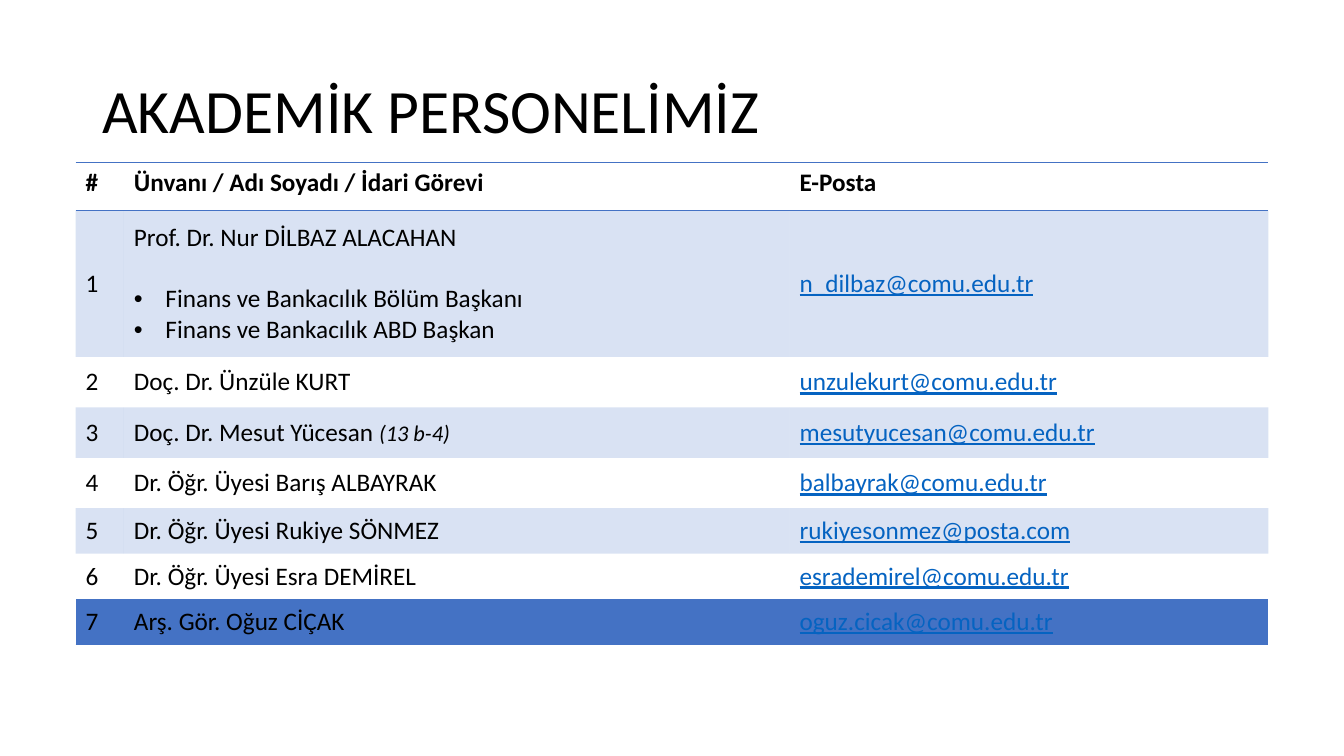
import dataclasses

import pptx
import pptx.dml.color
import pptx.enum.text
import pptx.oxml
import pptx.oxml.ns
import pptx.util

Pt = pptx.util.Pt
MIDDLE = pptx.enum.text.MSO_ANCHOR.MIDDLE


@dataclasses.dataclass(frozen=True)
class Theme:
    """Colours, font and type sizes of the slide."""
    font: str = "Calibri"
    text: str = "000000"
    accent: str = "4472C4"
    link: str = "0563C1"
    title_size: int = 44
    body_size: int = 18
    note_size: int = 16
    band_alpha: int = 20


THEME = Theme()
PLAIN_STYLE = "{2D5ABB26-0587-4C30-8999-92F81FD0307C}"
COLUMN_WIDTHS = (34.5, 475.5, 342)
ROW_HEIGHTS = (34.5, 104.5, 36, 36, 36, 32.5, 32.5, 32.5)
HEADINGS = ("#", "Ünvanı / Adı Soyadı / İdari Görevi", "E-Posta")
STAFF = (
    ("Prof. Dr. Nur DİLBAZ ALACAHAN", "", "n_dilbaz@comu.edu.tr",
     ("Finans ve Bankacılık Bölüm Başkanı", "Finans ve Bankacılık ABD Başkan")),
    ("Doç. Dr. Ünzüle KURT", "", "unzulekurt@comu.edu.tr", ()),
    ("Doç. Dr. Mesut Yücesan ", "(13 b-4)", "mesutyucesan@comu.edu.tr", ()),
    ("Dr. Öğr. Üyesi Barış ALBAYRAK", "", "balbayrak@comu.edu.tr", ()),
    ("Dr. Öğr. Üyesi Rukiye SÖNMEZ", "", "rukiyesonmez@posta.com", ()),
    ("Dr. Öğr. Üyesi Esra DEMİREL", "", "esrademirel@comu.edu.tr", ()),
    ("Arş. Gör. Oğuz CİÇAK", "", "oguz.cicak@comu.edu.tr", ()),
)


def add_run(paragraph, text, size=THEME.body_size, color=THEME.text,
            bold=False, italic=False, underline=False):
    """Append one formatted run to a paragraph."""
    run = paragraph.add_run()
    run.text = text
    font = run.font
    font.name, font.size = THEME.font, Pt(size)
    font.bold, font.italic, font.underline = bold, italic, underline
    font.color.rgb = pptx.dml.color.RGBColor.from_string(color)


def add_bullet(paragraph):
    """Give a paragraph a round bullet with a hanging indent."""
    properties = paragraph._p.get_or_add_pPr()
    properties.set("marL", str(Pt(22.5)))
    properties.set("indent", str(-Pt(22.5)))
    namespace = pptx.oxml.ns.nsdecls("a")
    properties.append(pptx.oxml.parse_xml(f'<a:buFont {namespace} typeface="Arial"/>'))
    properties.append(pptx.oxml.parse_xml(f'<a:buChar {namespace} char="•"/>'))


def add_border(cell, side):
    """Draw an accent line on one side of a cell, lnT or lnB."""
    cell._tc.get_or_add_tcPr().append(pptx.oxml.parse_xml(
        f'<a:{side} {pptx.oxml.ns.nsdecls("a")} w="{Pt(1)}"><a:solidFill>'
        f'<a:srgbClr val="{THEME.accent}"/></a:solidFill></a:{side}>'))


def fill_cell(cell, banded):
    """Fill a cell with the translucent accent, or leave it clear."""
    if not banded:
        cell.fill.background()
        return
    cell.fill.solid()
    cell.fill.fore_color.rgb = pptx.dml.color.RGBColor.from_string(THEME.accent)
    color = cell._tc.tcPr.find(".//" + pptx.oxml.ns.qn("a:srgbClr"))
    color.append(pptx.oxml.parse_xml(
        f'<a:alpha {pptx.oxml.ns.nsdecls("a")} val="{THEME.band_alpha * 1000}"/>'))


def add_title(slide, left, top, width, height):
    """Place the slide title in the given box."""
    box = slide.shapes.add_textbox(Pt(left), Pt(top), Pt(width), Pt(height))
    frame = box.text_frame
    frame.word_wrap = True
    frame.vertical_anchor = MIDDLE
    paragraph = frame.paragraphs[0]
    paragraph.line_spacing = 0.9
    add_run(paragraph, "AKADEMİK PERSONELİMİZ", THEME.title_size)


def write_person(cells, number, person):
    """Write one staff member into the cells of a row."""
    name, note, address, duties = person
    for cell in cells:
        cell.vertical_anchor = MIDDLE
    number_frame, name_frame, address_frame = (cell.text_frame for cell in cells)
    add_run(number_frame.paragraphs[0], str(number))
    add_run(name_frame.paragraphs[0], name)
    if note:
        add_run(name_frame.paragraphs[0], note, THEME.note_size, italic=True)
    for index, duty in enumerate(duties):
        paragraph = name_frame.add_paragraph()
        if index == 0:
            paragraph.space_before = Pt(22)
        add_bullet(paragraph)
        add_run(paragraph, duty)
    add_run(address_frame.paragraphs[0], address, color=THEME.link, underline=True)


def add_staff_table(slide, left, top):
    """Place the staff table with its top left corner at the given point."""
    frame = slide.shapes.add_table(
        len(ROW_HEIGHTS), len(COLUMN_WIDTHS), Pt(left), Pt(top),
        Pt(sum(COLUMN_WIDTHS)), Pt(sum(ROW_HEIGHTS)))
    table = frame.table
    table.horz_banding = False
    table._tbl.tblPr.find(pptx.oxml.ns.qn("a:tableStyleId")).text = PLAIN_STYLE
    for column, width in zip(table.columns, COLUMN_WIDTHS):
        column.width = Pt(width)
    for index, (row, height) in enumerate(zip(table.rows, ROW_HEIGHTS)):
        row.height = Pt(height)
        cells = list(row.cells)
        for cell in cells:
            if index == 0:
                add_border(cell, "lnT")
            if index in (0, len(STAFF)):
                add_border(cell, "lnB")
            fill_cell(cell, index % 2 == 1)
        if index:
            write_person(cells, index, STAFF[index - 1])
        else:
            for cell, heading in zip(cells, HEADINGS):
                add_run(cell.text_frame.paragraphs[0], heading, bold=True)


def main():
    """Build the staff slide and save it."""
    presentation = pptx.Presentation()
    presentation.slide_width, presentation.slide_height = Pt(960), Pt(540)
    slide = presentation.slides.add_slide(presentation.slide_layouts[6])
    add_title(slide, 66, 28.75, 828, 104.4)
    add_staff_table(slide, 54, 116)
    presentation.save("out.pptx")


if __name__ == "__main__":
    main()
